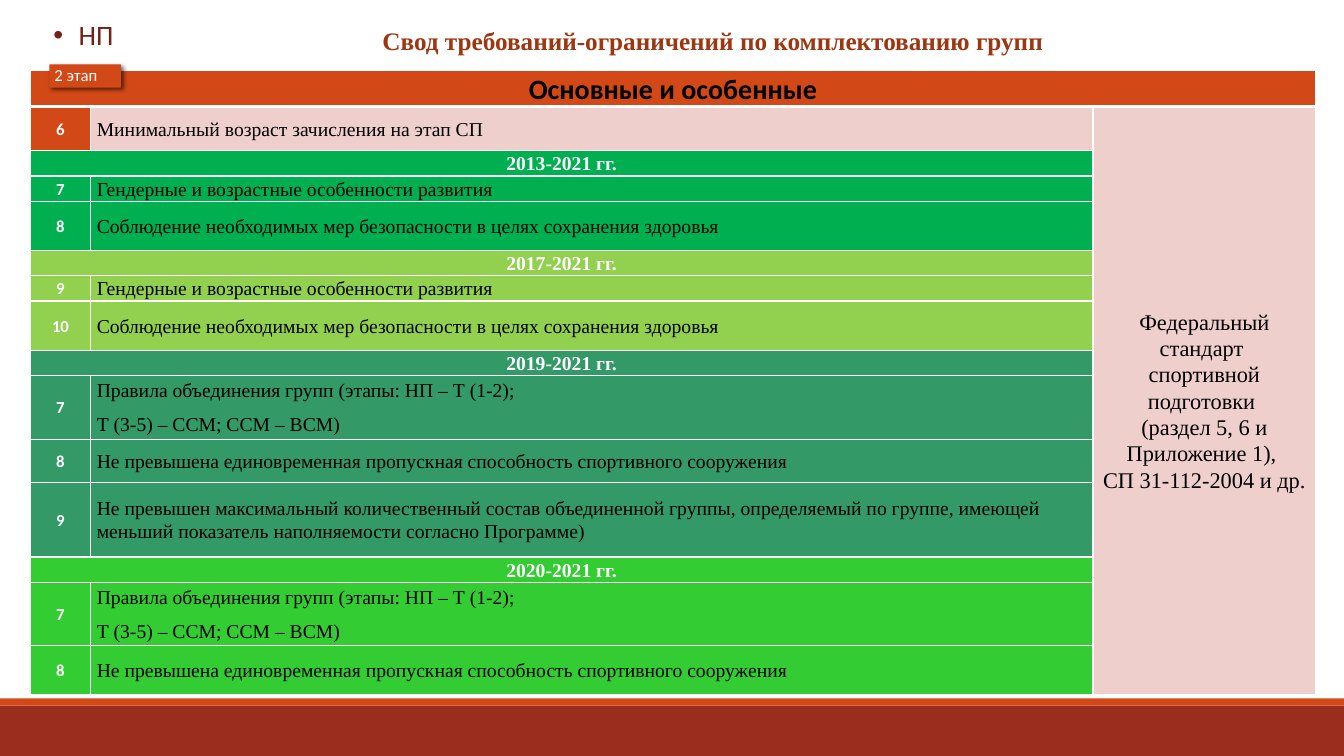
from dataclasses import dataclass

from lxml import etree
from pptx import Presentation
from pptx import util as u
from pptx.dml.color import RGBColor
from pptx.enum import shapes, text
from pptx.oxml import ns

COLUMNS, ROWS = 133.3, 75  # grid units, each a tenth of an inch
ALIGN, ANCHOR, SHAPE = text.PP_ALIGN, text.MSO_ANCHOR, shapes.MSO_SHAPE


@dataclass(frozen=True)
class Theme:
    serif: str = "Times New Roman"
    sans: str = "Calibri"
    white: str = "FFFFFF"
    black: str = "000000"
    accent: str = "D34817"
    footer: str = "9B2D1F"
    title: str = "9E3611"
    stage: str = "742217"
    pale: str = "EFCFCC"
    green: str = "00B050"
    lime: str = "92D050"
    teal: str = "339966"
    bright: str = "33CC33"
    small: int = 12
    body: int = 14
    source: int = 16
    heading: int = 18
    large: int = 20


def add_xml(parent, tag, **attributes):
    return etree.SubElement(parent, ns.qn(tag), {k: str(v) for k, v in attributes.items()})


class SlideBuilder:
    def __init__(self, deck, theme):
        self.theme = theme
        self.slide = deck.slides.add_slide(deck.slide_layouts[6])
        self.column = deck.slide_width / COLUMNS
        self.row = deck.slide_height / ROWS

    def box(self, x, y, w, h):
        return [round(v * unit) for v, unit in
                zip((x, y, w, h), (self.column, self.row) * 2)]

    def add_lines(self, frame, lines, size, font, color, bold=False,
                  align=ALIGN.LEFT, spacing=1.07, after=8):
        for i, line in enumerate(lines):
            paragraph = frame.paragraphs[0] if i == 0 else frame.add_paragraph()
            paragraph.alignment = align
            paragraph.line_spacing = spacing
            paragraph.space_after = u.Pt(after)
            run = paragraph.add_run()
            run.text = line
            run.font.size, run.font.name, run.font.bold = u.Pt(size), font, bold
            run.font.color.rgb = RGBColor.from_string(color)

    def block(self, area, color, kind=SHAPE.RECTANGLE):
        block = self.slide.shapes.add_shape(kind, *self.box(*area))
        block.shadow.inherit = False
        block.fill.solid()
        block.fill.fore_color.rgb = RGBColor.from_string(color)
        block.line.fill.background()
        return block

    def drop_shadow(self, block):
        effects = block._element.spPr.find(ns.qn("a:effectLst"))
        shadow = add_xml(effects, "a:outerShdw", blurRad=u.Pt(3), dist=u.Pt(2),
                         dir=45 * 60000, algn="tl", rotWithShape=0)
        color = add_xml(shadow, "a:srgbClr", val=self.theme.black)
        add_xml(color, "a:alpha", val=60000)

    def fade(self, block, percent):
        color = block._element.spPr.find(ns.qn("a:solidFill"))[0]
        add_xml(color, "a:alpha", val=percent * 1000)

    def label(self, area, line, insets=(1, 0.5, 1, 0.5), anchor=ANCHOR.TOP, **style):
        frame = self.slide.shapes.add_textbox(*self.box(*area)).text_frame
        frame.word_wrap = True
        frame.vertical_anchor = anchor
        (frame.margin_left, frame.margin_top,
         frame.margin_right, frame.margin_bottom) = self.box(*insets)
        self.add_lines(frame, [line], **style)
        return frame

    def bullet(self, frame, indent):
        properties = frame.paragraphs[0]._p.get_or_add_pPr()
        step = round(indent * self.column)
        properties.set("marL", str(step))
        properties.set("indent", str(-step))
        add_xml(properties, "a:buFont", typeface="Arial")
        add_xml(properties, "a:buChar", char="•")

    def table(self, x, y, widths, heights):
        table = self.slide.shapes.add_table(
            len(heights), len(widths),
            *self.box(x, y, sum(widths), sum(heights))).table
        table.horz_banding = False
        for column, width in zip(table.columns, widths):
            column.width = round(width * self.column)
        for row, height in zip(table.rows, heights):
            row.height = round(height * self.row)
        return table

    def paint(self, cell, color, top=1, bottom=1):
        cell.fill.solid()
        cell.fill.fore_color.rgb = RGBColor.from_string(color)
        properties = cell._tc.get_or_add_tcPr()
        edges = (("L", 1), ("R", 1), ("T", top), ("B", bottom))
        for i, (side, width) in enumerate(edges):
            line = add_xml(properties, f"a:ln{side}", w=u.Pt(width))
            add_xml(add_xml(line, "a:solidFill"), "a:srgbClr", val=self.theme.white)
            properties.insert(i, line)

    def fill_cell(self, cell, lines, anchor=ANCHOR.MIDDLE, **style):
        cell.margin_left = cell.margin_right = round(0.6 * self.column)
        cell.margin_top = cell.margin_bottom = 0
        cell.vertical_anchor = anchor
        self.add_lines(cell.text_frame, lines, **style)


def requirement_rows(t):
    """Rows as (height, colour, number, lines); a period row has no number."""
    traits = ["Гендерные и возрастные особенности развития"]
    safety = ["Соблюдение необходимых мер безопасности в целях сохранения здоровья"]
    merging = ["Правила объединения групп (этапы: НП – Т (1-2);", "Т (3-5) – ССМ; ССМ – ВСМ)"]
    capacity = ["Не превышена единовременная пропускная способность спортивного сооружения"]
    group_size = ["Не превышен максимальный количественный состав объединенной группы, "
                  "определяемый по группе, имеющей меньший показатель "
                  "наполняемости согласно Программе)"]
    periods = [
        ("2013-2021 гг.", t.green, [(2.4, "7", traits), (4.9, "8", safety)]),
        ("2017-2021 гг.", t.lime, [(2.4, "9", traits), (4.9, "10", safety)]),
        ("2019-2021 гг.", t.teal, [(6.3, "7", merging), (4.3, "8", capacity),
                                   (7.4, "9", group_size)]),
        ("2020-2021 гг.", t.bright, [(6.3, "7", merging), (4.9, "8", capacity)]),
    ]
    rows = [(4.4, t.pale, "6", ["Минимальный возраст зачисления на этап СП"])]
    for period, color, items in periods:
        rows.append((2.4, color, None, [period]))
        rows += [(height, color, number, lines) for height, number, lines in items]
    return rows


def requirements_table(page):
    t = page.theme
    rows = requirement_rows(t)
    table = page.table(3, 7, (6, 99.4, 22.1), [2.4] + [row[0] for row in rows])
    serif = dict(size=t.body, font=t.serif)

    # Header across all columns
    for column in range(3):
        page.paint(table.cell(0, column), t.accent, bottom=3)
    table.cell(0, 0).merge(table.cell(0, 2))
    page.fill_cell(table.cell(0, 0), ["Основные и особенные"], ANCHOR.TOP,
                   size=t.large, font=t.sans, color=t.black, bold=True,
                   align=ALIGN.CENTER)

    # Periods and numbered requirements
    for i, (_, color, number, lines) in enumerate(rows, 1):
        first, requirement, basis = (table.cell(i, column) for column in range(3))
        top = 3 if i == 1 else 1
        page.paint(first, t.accent if i == 1 else color, top)
        page.paint(requirement, color, top)
        page.paint(basis, t.pale, top)
        if number is None:
            first.merge(requirement)
            page.fill_cell(first, lines, color=t.white, bold=True,
                           align=ALIGN.CENTER, **serif)
        else:
            page.fill_cell(first, [number], size=t.small, font=t.sans,
                           color=t.white, bold=True, align=ALIGN.CENTER)
            page.fill_cell(requirement, lines, color=t.black, **serif)

    # Regulatory basis beside all rows
    table.cell(1, 2).merge(table.cell(len(rows), 2))
    page.fill_cell(table.cell(1, 2),
                   ["Федеральный стандарт ", "спортивной подготовки ",
                    "(раздел 5, 6 и Приложение 1), ", "СП 31-112-2004 и др."],
                   size=t.source, font=t.serif, color=t.black,
                   align=ALIGN.CENTER, spacing=1.06, after=0)


def main():
    deck = Presentation()
    deck.slide_width, deck.slide_height = u.Inches(13.33), u.Inches(7.5)
    t = Theme()
    page = SlideBuilder(deck, t)

    # Footer bands
    page.block((0, 70, COLUMNS, 5), t.footer)
    page.block((0, 69.3, COLUMNS, 0.7), t.accent)

    # Title
    title = page.label((15.3, 1.8, 110.8, 4.1),
                       "Свод требований-ограничений по комплектованию групп",
                       size=t.heading, font=t.serif, color=t.title, bold=True,
                       align=ALIGN.CENTER)
    title.auto_size = text.MSO_AUTO_SIZE.SHAPE_TO_FIT_TEXT

    requirements_table(page)

    # Stage card with its badge
    card = page.block((4.9, 1.1, 7.1, 5.3), t.white, SHAPE.ROUND_2_SAME_RECTANGLE)
    card.adjustments[0], card.adjustments[1] = 0.08, 0
    page.fade(card, 90)
    stage = page.label((5, 1.3, 6.9, 5.2), "НП", (0.3, 0.8, 0.3, 0.3),
                       size=t.large, font=t.sans, color=t.stage, spacing=0.9, after=3)
    page.bullet(stage, 2.5)
    page.drop_shadow(page.block((4.9, 6.4, 7.1, 2.3), t.accent))
    page.label((4.9, 6.4, 5, 2.3), "2 этап", (0.5, 0, 0.2, 0), ANCHOR.MIDDLE,
               size=t.small, font=t.sans, color=t.white, spacing=0.9, after=4)

    deck.save("out.pptx")


if __name__ == "__main__":
    main()
